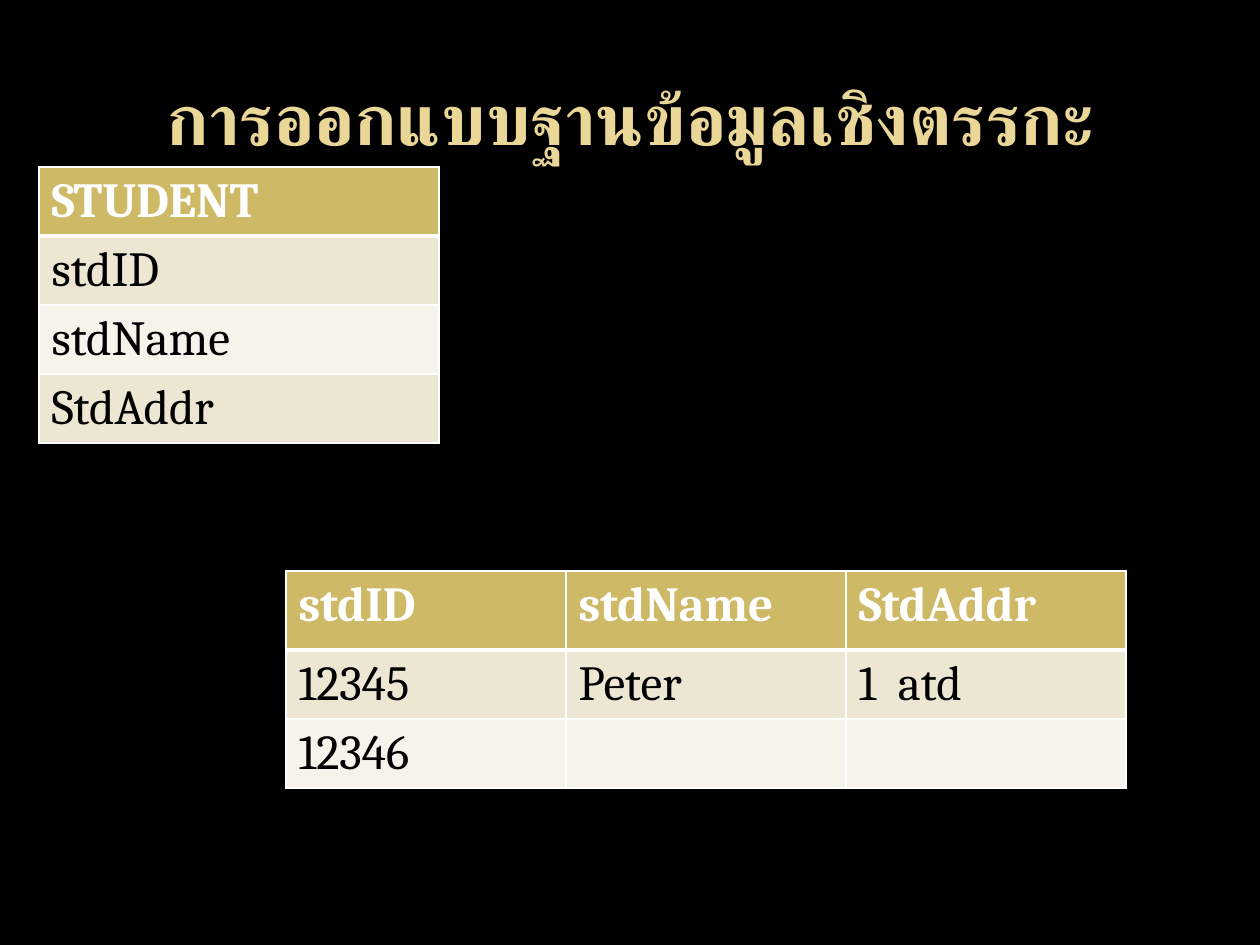
from dataclasses import dataclass

from lxml.etree import SubElement
from pptx import Presentation
from pptx.dml.color import RGBColor as Rgb
from pptx.enum.text import MSO_ANCHOR as Anchor, MSO_AUTO_SIZE as Fit, PP_ALIGN as Align
from pptx.oxml.ns import qn
from pptx.util import Pt

PX = 914400 // 126


@dataclass(frozen=True)
class Theme:
    """Colours, fonts and type sizes of the slide."""
    back: str = "000000"
    title: str = "EAD696"
    head: str = "CEB966"
    bands: tuple = ("EDE6D3", "F6F3EA")
    light: str = "FFFFFF"
    dark: str = "000000"
    title_face: str = "Open Sans"
    face: str = "Cambria"
    title_size: int = 41
    size: int = 28


LOOK = Theme()


def px(*vals):
    """Turn pixels into EMU."""
    return [val * PX for val in vals]


def paint(fill, tint):
    """Give a fill one solid colour."""
    fill.solid()
    fill.fore_color.rgb = Rgb.from_string(tint)


def style(par, face, size, tint, bold):
    """Set the font of a paragraph."""
    font = par.font
    font.name, font.size, font.bold = face, Pt(size), bold
    font.color.rgb = Rgb.from_string(tint)


def edge(cell, side, width):
    """Add a border line to one side of a cell."""
    line = SubElement(cell._tc.get_or_add_tcPr(), qn(f"a:ln{side}"), w=str(Pt(width)))
    fill = SubElement(line, qn("a:solidFill"))
    SubElement(fill, qn("a:srgbClr"), val=LOOK.light)


def add_title(slide, text, box):
    """Place and format the title."""
    shape = slide.shapes.title
    shape.left, shape.top, shape.width, shape.height = px(*box)
    frame = shape.text_frame
    frame.text = text
    frame.auto_size = Fit.NONE
    frame.vertical_anchor = Anchor.MIDDLE
    par = frame.paragraphs[0]
    par.alignment = Align.CENTER
    style(par, LOOK.title_face, LOOK.title_size, LOOK.title, True)


def fill_cell(cell, text, row):
    """Write and format one cell by its row."""
    head = row == 0
    cell.text = text
    style(cell.text_frame.paragraphs[0], LOOK.face, LOOK.size,
          LOOK.light if head else LOOK.dark, head)
    for side in "LRTB":
        thick = (row, side) in ((0, "B"), (1, "T"))
        edge(cell, side, 3 if thick else 1)
    paint(cell.fill, LOOK.head if head else LOOK.bands[(row - 1) % 2])


def add_grid(slide, data, left, top, wide, highs):
    """Add a table with equal columns."""
    cols = len(data[0])
    box = px(left, top, wide * cols, sum(highs))
    grid = slide.shapes.add_table(len(data), cols, *box).table
    for col in grid.columns:
        col.width = wide * PX
    for row, (texts, high) in enumerate(zip(data, highs)):
        grid.rows[row].height = high * PX
        for col, text in enumerate(texts):
            fill_cell(grid.cell(row, col), text, row)


def main():
    """Build and save the slide."""
    deck = Presentation()
    deck.slide_width, deck.slide_height = px(1260, 945)
    slide = deck.slides.add_slide(deck.slide_layouts[5])
    paint(slide.background.fill, LOOK.back)
    add_title(slide, "การออกแบบฐานข้อมูลเชิงตรรกะ", (63, 38, 1134, 157))
    names = ["stdID", "stdName", "StdAddr"]
    schema = [["STUDENT"]] + [[name] for name in names]
    add_grid(slide, schema, 39, 167, 400, [51] * 4)
    people = [names, ["12345", "Peter", "1  atd"], ["12346", "", ""]]
    add_grid(slide, people, 286, 571, 280, [79, 51, 51])
    deck.save("out.pptx")


if __name__ == "__main__":
    main()
